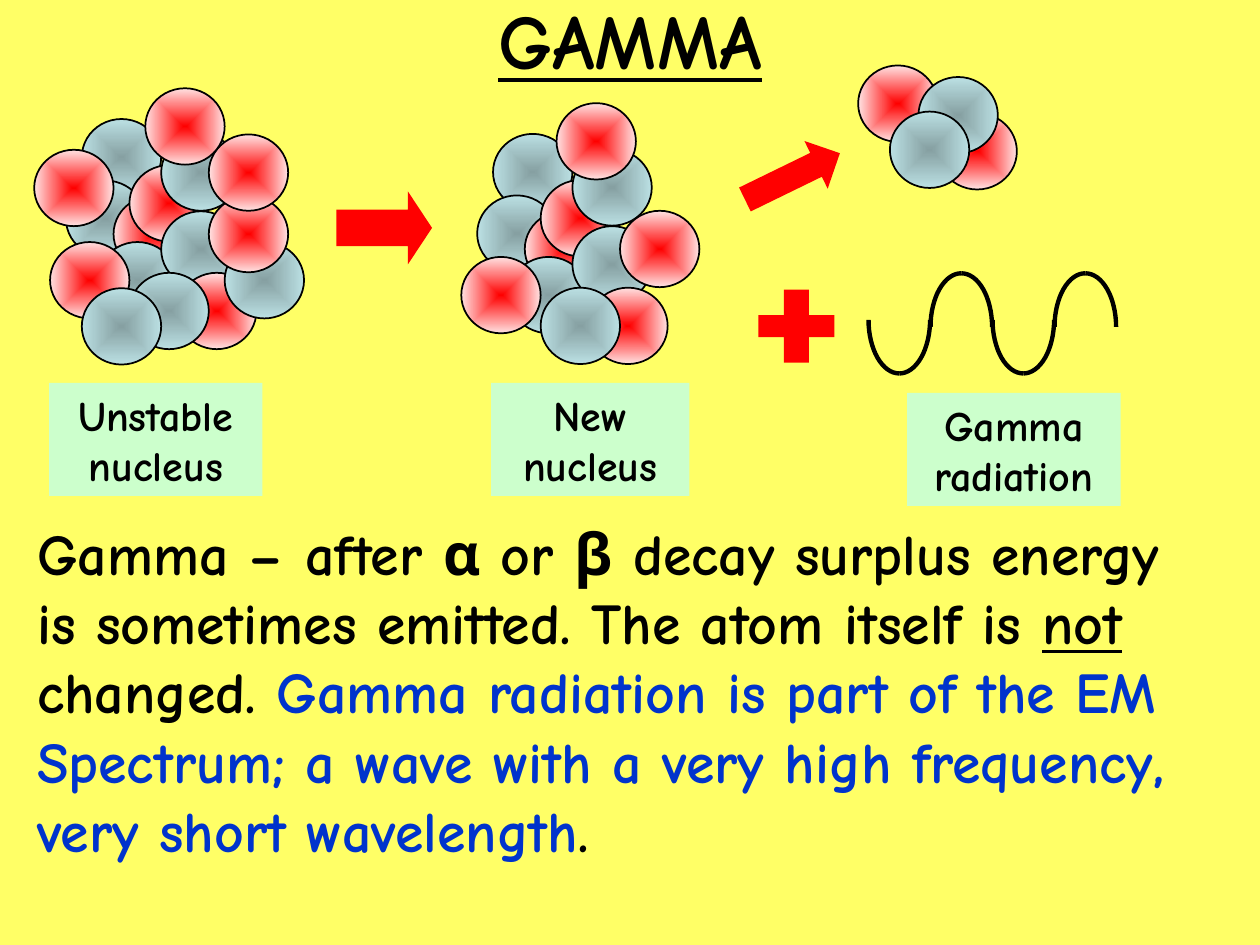
"""Build the slide that explains gamma radiation."""
import math

from lxml import etree
from pptx import Presentation
from pptx import util as u
from pptx.dml import color
from pptx.enum import shapes, text
from pptx.oxml import ns

COLOURS = {
    "background": "FFFF66", "black": "000000", "blue": "0033CC",
    "red": "FF0000", "label": "CCFFCC",
}
PARTICLES = {"n": ("86A0A2", "BBE0E3"), "p": ("FF0000", "FFE2E2")}
FONT = "Comic Neue"
COLUMN, ROW = 0.32, 0.31

UNSTABLE_NUCLEUS = [
    ("n", 3, 2), ("n", 2, 6), ("p", 5, 7), ("p", 6, 5), ("n", 4, 10), ("p", 0, 4),
    ("p", 1, 10), ("n", 8, 8), ("p", 9, 12), ("n", 12, 10), ("n", 8, 3), ("p", 11, 7),
    ("n", 6, 12), ("p", 11, 3), ("p", 7, 0), ("n", 3, 13),
]
NEW_NUCLEUS = [
    ("n", 2, 2), ("n", 1, 6), ("p", 4, 7), ("p", 5, 5), ("n", 3, 10), ("p", 0, 10),
    ("n", 7, 8), ("p", 8, 12), ("n", 7, 3), ("p", 10, 7), ("n", 5, 12), ("p", 6, 0),
]
ALPHA_PARTICLE = [("p", 0, 0), ("p", 5, 3.1), ("n", 3.8, 0.75), ("n", 2, 3)]


def rgb(name):
    """Return the named colour."""
    return color.RGBColor.from_string(COLOURS[name])


def style_run(run, size, colour="black", underline=False):
    """Give a run the bold slide font."""
    run.font.name = FONT
    run.font.size = u.Pt(size)
    run.font.bold = True
    run.font.underline = underline
    run.font.color.rgb = rgb(colour)


def add_text(slide, left, top, width, height, size, parts, centred=False):
    """Add a text box made of (wording, colour, underline) parts."""
    box = slide.shapes.add_textbox(u.Cm(left), u.Cm(top), u.Cm(width), u.Cm(height))
    frame = box.text_frame
    frame.word_wrap = True
    paragraph = frame.paragraphs[0]
    if centred:
        paragraph.alignment = text.PP_ALIGN.CENTER
        frame.vertical_anchor = text.MSO_ANCHOR.MIDDLE
    for wording, colour, underline in parts:
        run = paragraph.add_run()
        run.text = wording
        style_run(run, size, colour, underline)


def add_plain_shape(slide, kind, left, top, width, height, colour, adjustments=()):
    """Add a flat preset shape without an outline."""
    shape = slide.shapes.add_shape(kind, u.Cm(left), u.Cm(top), u.Cm(width), u.Cm(height))
    shape.shadow.inherit = False
    shape.fill.solid()
    shape.fill.fore_color.rgb = rgb(colour)
    shape.line.fill.background()
    for index, value in enumerate(adjustments):
        shape.adjustments[index] = value
    return shape


def add_label(slide, left, top, width, wording):
    """Add a green caption box."""
    shape = add_plain_shape(slide, shapes.MSO_SHAPE.RECTANGLE, left, top, width, 2.28, "label")
    shape.text_frame.word_wrap = True
    shape.text_frame.text = wording
    paragraph = shape.text_frame.paragraphs[0]
    paragraph.alignment = text.PP_ALIGN.CENTER
    style_run(paragraph.runs[0], 24)


def add_particle(group, kind, left, top):
    """Add a proton or neutron shaded outwards from its centre."""
    ball = group.shapes.add_shape(
        shapes.MSO_SHAPE.OVAL, u.Cm(left), u.Cm(top), u.Cm(1.6), u.Cm(1.54))
    ball.shadow.inherit = False
    ball.line.color.rgb = rgb("black")
    ball.line.width = u.Pt(1)
    ball.fill.gradient()
    for stop, value in zip(ball.fill.gradient_stops, PARTICLES[kind]):
        stop.color.rgb = color.RGBColor.from_string(value)
    linear = ball.element.spPr.find(".//" + ns.qn("a:lin"))
    shading = etree.Element(ns.qn("a:path"))
    shading.set("path", "shape")
    centre = etree.SubElement(shading, ns.qn("a:fillToRect"))
    for side in "ltrb":
        centre.set(side, "50000")
    linear.getparent().replace(linear, shading)


def add_nucleus(slide, left, top, particles):
    """Add a group of particles placed on a grid."""
    group = slide.shapes.add_group_shape()
    for kind, column, row in particles:
        add_particle(group, kind, left + column * COLUMN, top + row * ROW)


def add_quarter_wave(group, centre, level, reach, rise):
    """Add a quarter of an ellipse, from its peak to its side."""
    angles = [math.pi / 2 * step / 16 for step in range(17)]
    points = [(u.Cm(centre + reach * math.sin(angle)), u.Cm(level + rise * math.cos(angle)))
              for angle in angles]
    builder = group.shapes.build_freeform(*points[0])
    builder.add_line_segments(points[1:], close=False)
    curve = builder.convert_to_shape()
    curve.shadow.inherit = False
    curve.fill.background()
    curve.line.color.rgb = rgb("black")
    curve.line.width = u.Pt(2.5)


def add_wave(slide):
    """Add the wave as alternating troughs and crests."""
    group = slide.shapes.add_group_shape()
    for half in range(4):
        level, rise = ((6.45, 1.08), (6.59, -1.08))[half % 2]
        for reach in (0.62, -0.62):
            add_quarter_wave(group, 18.13 + half * 1.25, level, reach, rise)


def main():
    """Build and save the slide."""
    presentation = Presentation()
    presentation.slide_width, presentation.slide_height = u.Cm(25.4), u.Cm(19.05)
    slide = presentation.slides.add_slide(presentation.slide_layouts[6])
    slide.background.fill.solid()
    slide.background.fill.fore_color.rgb = rgb("background")

    add_text(slide, 1.27, -0.48, 22.86, 2.54, 44, [("GAMMA", "black", True)], centred=True)
    add_text(slide, 0.5, 10.31, 24.2, 8.64, 33, [
        ("Gamma – after α or β decay surplus energy is sometimes emitted. "
         "The atom itself is ", "black", False),
        ("not", "black", True),
        (" changed. ", "black", False),
        ("Gamma radiation is part of the EM Spectrum; a wave with a very high "
         "frequency, very short wavelength", "blue", False),
        (".", "black", False),
    ])

    add_nucleus(slide, 0.69, 1.78, UNSTABLE_NUCLEUS)
    add_nucleus(slide, 9.3, 2.08, NEW_NUCLEUS)
    add_nucleus(slide, 17.3, 1.32, ALPHA_PARTICLE)
    add_wave(slide)

    add_label(slide, 0.99, 7.72, 4.3, "Unstable nucleus")
    add_label(slide, 9.9, 7.72, 4, "New nucleus")
    add_label(slide, 18.29, 7.92, 4.3, "Gamma radiation")

    arrow = shapes.MSO_SHAPE.RIGHT_ARROW
    add_plain_shape(slide, arrow, 6.78, 3.86, 1.93, 1.47, "red", (0.5, 0.33))
    add_plain_shape(slide, shapes.MSO_SHAPE.CROSS, 15.29, 5.84, 1.53, 1.47, "red", (0.35,))
    emission = add_plain_shape(slide, arrow, 14.91, 3.02, 2.13, 1.07, "red", (0.5, 0.5))
    emission.rotation = 334

    presentation.save("out.pptx")


if __name__ == "__main__":
    main()
